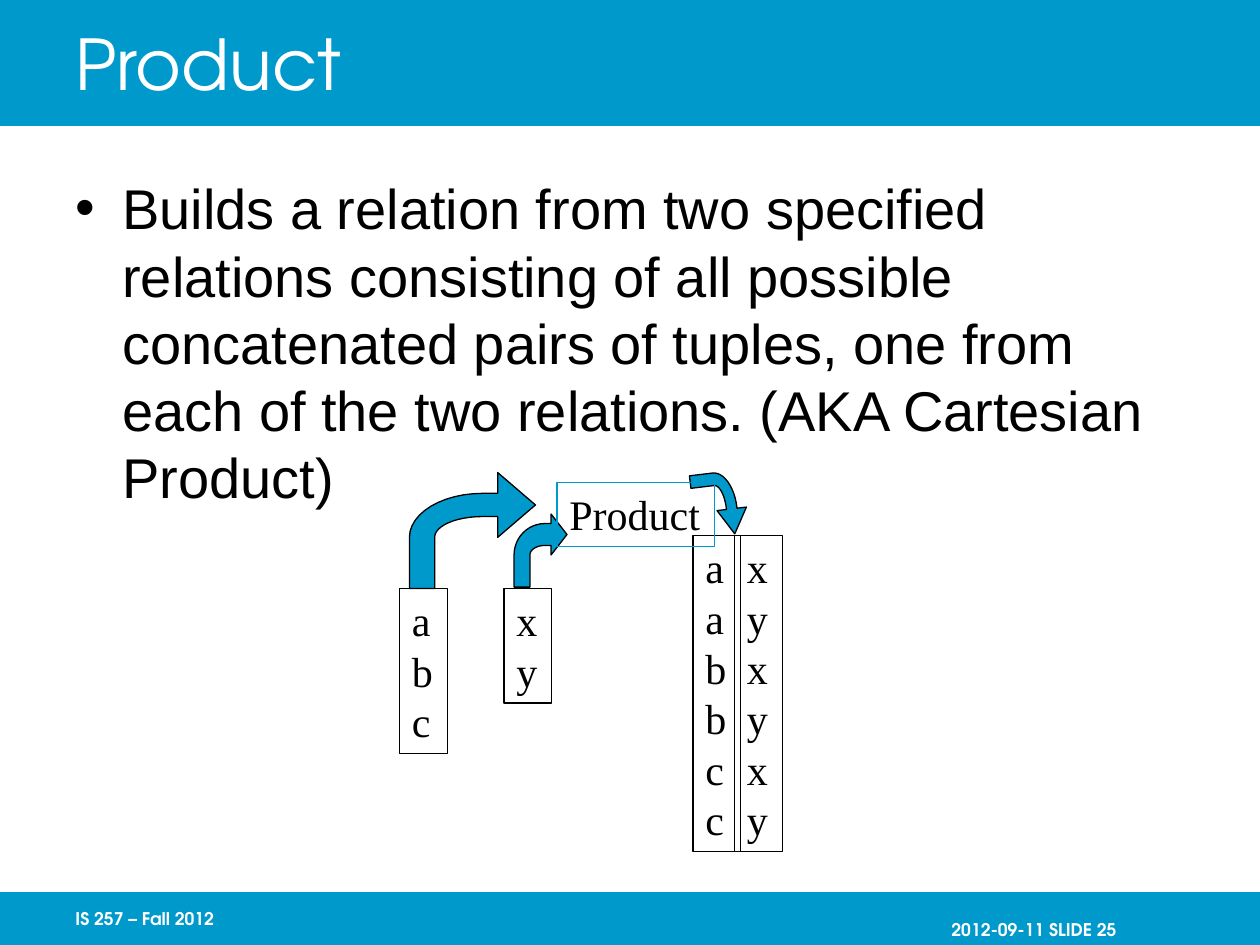
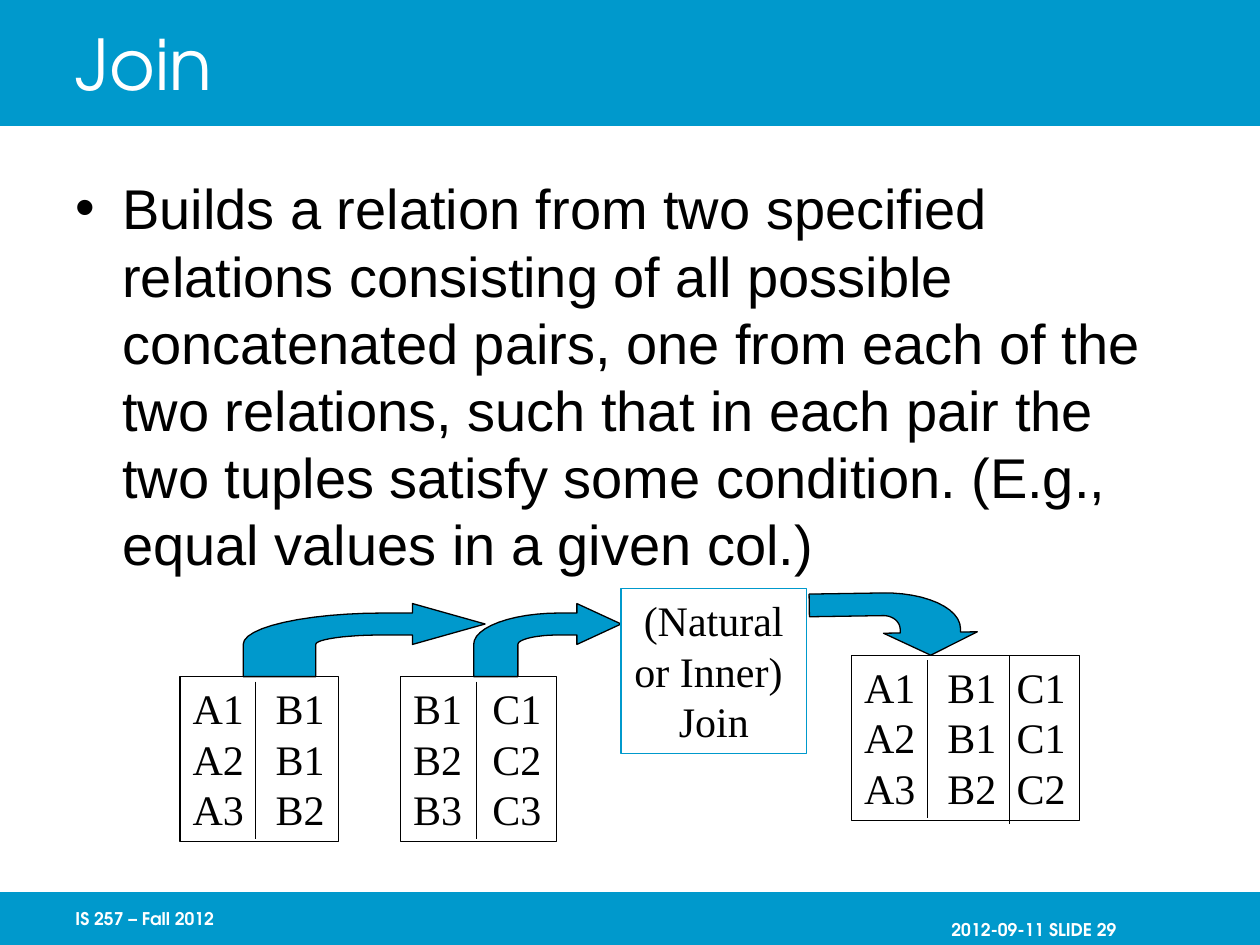
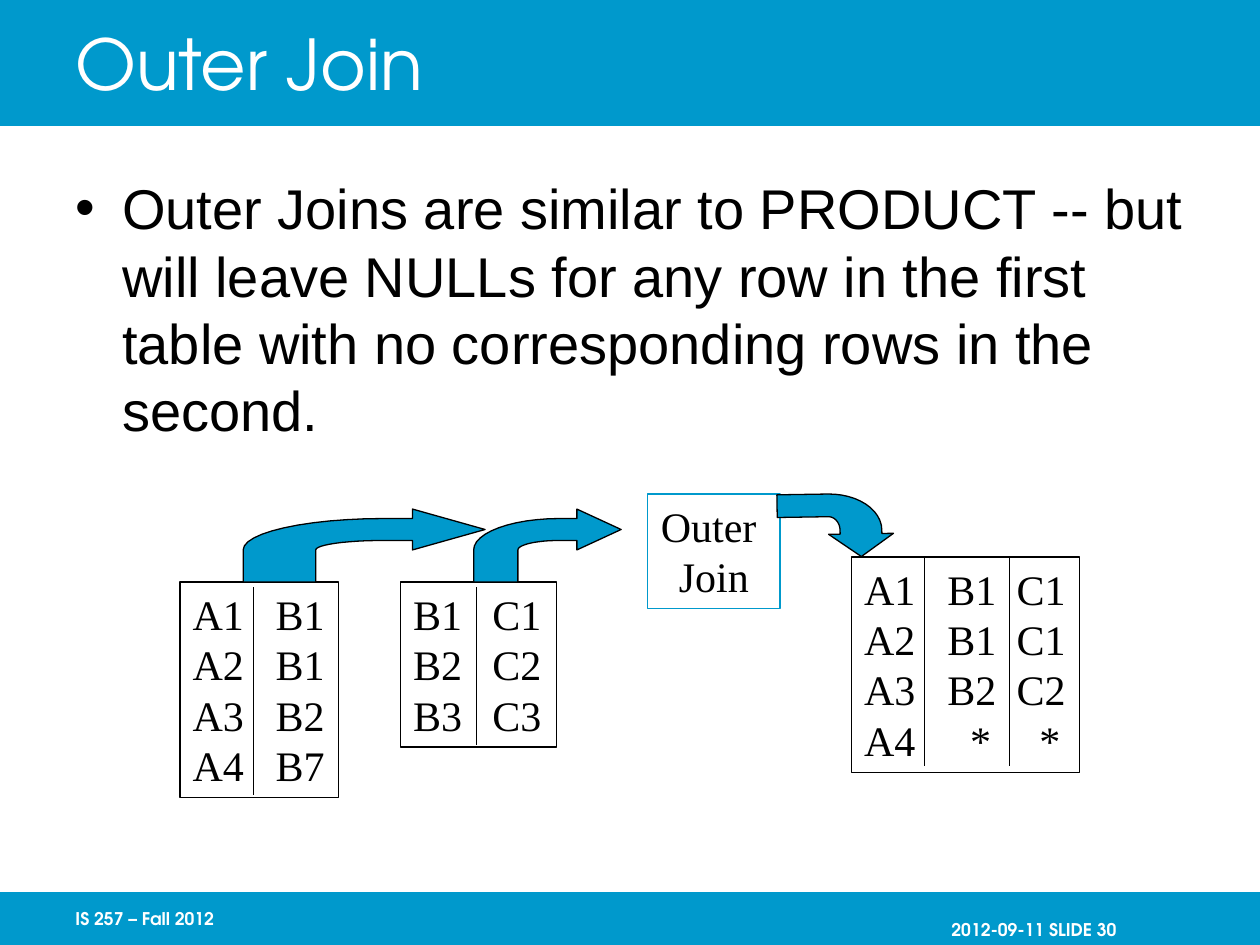
from math import cos, pi, sin

from lxml import etree
from pptx import Presentation
from pptx.dml.color import RGBColor
from pptx.enum.shapes import MSO_CONNECTOR as Connector, MSO_SHAPE as Shape
from pptx.enum.text import MSO_ANCHOR as Anchor, MSO_AUTO_SIZE as AutoSize, PP_ALIGN as Align
from pptx.oxml.ns import qn
from pptx.util import Inches, Pt

BLUE = RGBColor(0x00, 0x99, 0xCC)
BLACK = RGBColor(0, 0, 0)
WHITE = RGBColor(255, 255, 255)
HEADING_FONT = "TeX Gyre Adventor"
BODY_FONT = "Arial"
DIAGRAM_FONT = "Times New Roman"
LINE_HEIGHT = 0.4
BULLET_INDENT = 0.37


def style_font(paragraph, name, size, color, bold=False):
    """Format every run of a paragraph."""
    for run in paragraph.runs:
        run.font.name = name
        run.font.size = Pt(size)
        run.font.bold = bold
        run.font.color.rgb = color


def set_margins(frame, left, top, right, bottom):
    """Set the four insets of a text frame in inches."""
    frame.margin_left, frame.margin_top = Inches(left), Inches(top)
    frame.margin_right, frame.margin_bottom = Inches(right), Inches(bottom)


def place(shape, left, top, width, height):
    """Move and size a shape in inches."""
    shape.left, shape.top = Inches(left), Inches(top)
    shape.width, shape.height = Inches(width), Inches(height)


def add_band(slide, top, height):
    """Draw a full-width blue band behind everything else."""
    band = slide.shapes.add_shape(
        Shape.RECTANGLE, 0, Inches(top), Inches(10), Inches(height))
    band.shadow.inherit = False
    band.fill.solid()
    band.fill.fore_color.rgb = BLUE
    band.line.fill.background()
    slide.shapes.title.element.addprevious(band.element)


def add_footer(slide, left, text, align, top_inset=0.05, right_inset=0):
    """Write one label in the bottom band."""
    label = slide.shapes.add_textbox(
        Inches(left), Inches(7.08), Inches(2.08), Inches(0.42))
    frame = label.text_frame
    frame.word_wrap = True
    frame.vertical_anchor = Anchor.MIDDLE
    set_margins(frame, 0.1, top_inset, right_inset, 0.05)
    frame.text = text
    frame.paragraphs[0].alignment = align
    style_font(frame.paragraphs[0], HEADING_FONT, 10, WHITE, True)


def add_slide(prs, title, definition, number):
    """Create a slide with bands, footers, title and bulleted definition."""
    slide = prs.slides.add_slide(prs.slide_layouts[1])
    add_band(slide, 0, 1)
    add_band(slide, 7.08, 0.42)
    add_footer(slide, 0.5, "IS 257 – Fall 2012", Align.LEFT)
    add_footer(slide, 7.42, f"2012-09-11 SLIDE {number}", Align.RIGHT, 0.22, 0.64)

    heading = slide.shapes.title
    place(heading, 0.5, 0, 8.5, 1)
    heading.text_frame.text = title
    heading.text_frame.auto_size = AutoSize.NONE
    heading.text_frame.vertical_anchor = Anchor.MIDDLE
    heading.text_frame.paragraphs[0].alignment = Align.LEFT
    style_font(heading.text_frame.paragraphs[0], HEADING_FONT, 40, WHITE)

    body = slide.placeholders[1]
    place(body, 0.5, 1.33, 9, 5.42)
    body.text_frame.text = definition
    body.text_frame.auto_size = AutoSize.NONE
    set_margins(body.text_frame, 0.1, 0.05, 0.1, 0)
    bullet = body.text_frame.paragraphs[0]
    properties = bullet._p.get_or_add_pPr()
    properties.set("marL", str(Inches(BULLET_INDENT)))
    properties.set("indent", str(-Inches(BULLET_INDENT)))
    etree.SubElement(properties, qn("a:buChar")).set("char", "•")
    bullet.space_before = Pt(0)
    style_font(bullet, BODY_FONT, 32, BLACK)
    return slide


def add_tab_stops(paragraph, stops):
    """Give a paragraph left tab stops, in inches."""
    tabs = etree.SubElement(paragraph._p.get_or_add_pPr(), qn("a:tabLst"))
    for stop in stops:
        etree.SubElement(tabs, qn("a:tab"), pos=str(Inches(stop)), algn="l")


def add_box(slide, left, top, width, rows, outline=BLACK, align=Align.LEFT, stops=()):
    """Draw an outlined box with one line of text per row."""
    box = slide.shapes.add_shape(
        Shape.RECTANGLE, Inches(left), Inches(top),
        Inches(width), Inches(0.11 + LINE_HEIGHT * len(rows)))
    box.shadow.inherit = False
    box.fill.background()
    box.line.color.rgb = outline
    box.line.width = Pt(0.75)
    frame = box.text_frame
    frame.word_wrap = align == Align.LEFT
    frame.vertical_anchor = Anchor.TOP
    set_margins(frame, 0.1, 0.05, 0 if frame.word_wrap else 0.1, 0.05)
    frame.text = "\n".join(rows)
    for paragraph, row in zip(frame.paragraphs, rows):
        if stops:
            shift = 0.18 if "*" in row else 0
            add_tab_stops(paragraph, [stop + shift for stop in stops])
        paragraph.alignment = align
        style_font(paragraph, DIAGRAM_FONT, 24, BLACK)


def add_divider(slide, x, top, bottom):
    """Draw a vertical line between two columns."""
    divider = slide.shapes.add_connector(
        Connector.STRAIGHT, Inches(x), Inches(top), Inches(x), Inches(bottom))
    divider.line.color.rgb = BLACK
    divider.line.width = Pt(0.75)
    etree.SubElement(divider.element.spPr, qn("a:effectLst"))


def add_bent_arrow(slide, left, top, width, height, shaft=0.3, neck=0.7, rotation=0):
    """Draw an arrow that rises, bends right and ends in a head."""
    tip, bend_x, bend_y, steps = 0.28, 0.58, 0.56, 12
    upper, lower = tip - shaft / 2, tip + shaft / 2

    def bend(radius_x, radius_y):
        """Return a quarter ellipse from its top to its left end."""
        angles = [pi / 2 * step / steps for step in range(steps + 1)]
        return [(bend_x - radius_x * sin(a), bend_y - radius_y * cos(a)) for a in angles]

    outline = [(1, tip), (neck, 0), (neck, upper)]
    outline += bend(bend_x, bend_y - upper)
    outline += [(0, 1), (shaft, 1)]
    outline += reversed(bend(bend_x - shaft, bend_y - lower))
    outline += [(neck, lower), (neck, 2 * tip)]
    points = [(Inches(left + x * width), Inches(top + y * height)) for x, y in outline]
    builder = slide.shapes.build_freeform(*points[0])
    builder.add_line_segments(points[1:], close=True)
    arrow = builder.convert_to_shape()
    arrow.shadow.inherit = False
    arrow.fill.solid()
    arrow.fill.fore_color.rgb = BLUE
    arrow.line.color.rgb = BLACK
    arrow.line.width = Pt(0.75)
    arrow.rotation = rotation


def add_join_sources(slide, top, first_rows, first_divider):
    """Draw the two joined relations and the arrows that leave them."""
    second_rows = ["B1\tC1", "B2\tC2", "B3\tC3"]
    add_box(slide, 1.43, top, 1.26, first_rows, stops=[0.66])
    add_divider(slide, first_divider, top + 0.04, top + 0.09 + LINE_HEIGHT * len(first_rows))
    add_box(slide, 3.18, top, 1.24, second_rows, stops=[0.63])
    add_divider(slide, 3.78, top + 0.04, top + 1.29)
    for left, width in ((1.93, 1.92), (3.76, 1.17)):
        add_bent_arrow(slide, left, top - 0.58, width, 0.58)


def add_join_result(slide, top, rows, dividers):
    """Draw the three-column relation that a join yields."""
    add_box(slide, 6.76, top, 1.81, rows, stops=[0.66, 1.21])
    for x, start, end in dividers:
        add_divider(slide, x, start, end)


def build_product(prs):
    """Build the slide on the product operation."""
    slide = add_slide(
        prs, "Product",
        "Builds a relation from two specified relations consisting of all possible "
        "concatenated pairs of tuples, one from each of the two relations. "
        "(AKA Cartesian Product)", 25)
    for left, top, values in (
            (3.17, 4.67, "abc"), (4, 4.67, "xy"),
            (5.83, 4.25, "xyxyxy"), (5.5, 4.25, "aabbcc")):
        add_box(slide, left, top, 0.38, values)
    add_bent_arrow(slide, 3.25, 3.75, 1, 0.92, shaft=0.2)
    add_bent_arrow(slide, 4.08, 4.08, 0.42, 0.58)
    add_bent_arrow(slide, 5.46, 3.79, 0.5, 0.42, 0.2, 0.6, 83.2)
    add_box(slide, 4.42, 3.83, 1.25, ["Product"], BLUE)


def build_join(prs):
    """Build the slide on the inner join."""
    slide = add_slide(
        prs, "Join",
        "Builds a relation from two specified relations consisting of all possible "
        "concatenated pairs, one from each of the two relations, such that in each "
        "pair the two tuples satisfy some condition. (E.g., equal values in a given "
        "col.)", 29)
    add_join_sources(slide, 5.37, ["A1\tB1", "A2\tB1", "A3\tB2"], 2.03)
    add_join_result(slide, 5.2, ["A1\tB1\tC1", "A2\tB1\tC1", "A3\tB2\tC2"],
                    [(7.36, 5.24, 6.49), (8.01, 5.2, 6.54)])
    add_box(slide, 4.93, 4.67, 1.47, ["(Natural", "or Inner) ", "Join"], BLUE, Align.CENTER)
    add_bent_arrow(slide, 6.84, 4.29, 0.5, 1.33, 0.36, 0.64, 89.1)


def build_outer_join(prs):
    """Build the slide on the outer join."""
    slide = add_slide(
        prs, "Outer Join",
        "Outer Joins are similar to PRODUCT -- but will leave NULLs for any row in "
        "the first table with no corresponding rows in the second.", 30)
    add_join_sources(slide, 4.62, ["A1\tB1", "A2\tB1", "A3\tB2", "A4\tB7"], 2.01)
    add_join_result(slide, 4.42, ["A1\tB1\tC1", "A2\tB1\tC1", "A3\tB2\tC2", "A4\t*\t*"],
                    [(7.34, 4.42, 6.08), (8.01, 4.42, 6.08)])
    add_box(slide, 5.14, 3.92, 1.05, ["Outer ", "Join"], BLUE, Align.CENTER)
    add_bent_arrow(slide, 6.38, 3.71, 0.5, 0.92, 0.36, 0.64, 89.1)


def main():
    """Build the presentation and save it."""
    prs = Presentation()
    prs.slide_width, prs.slide_height = Inches(10), Inches(7.5)
    build_product(prs)
    build_join(prs)
    build_outer_join(prs)
    prs.save("out.pptx")


if __name__ == "__main__":
    main()
